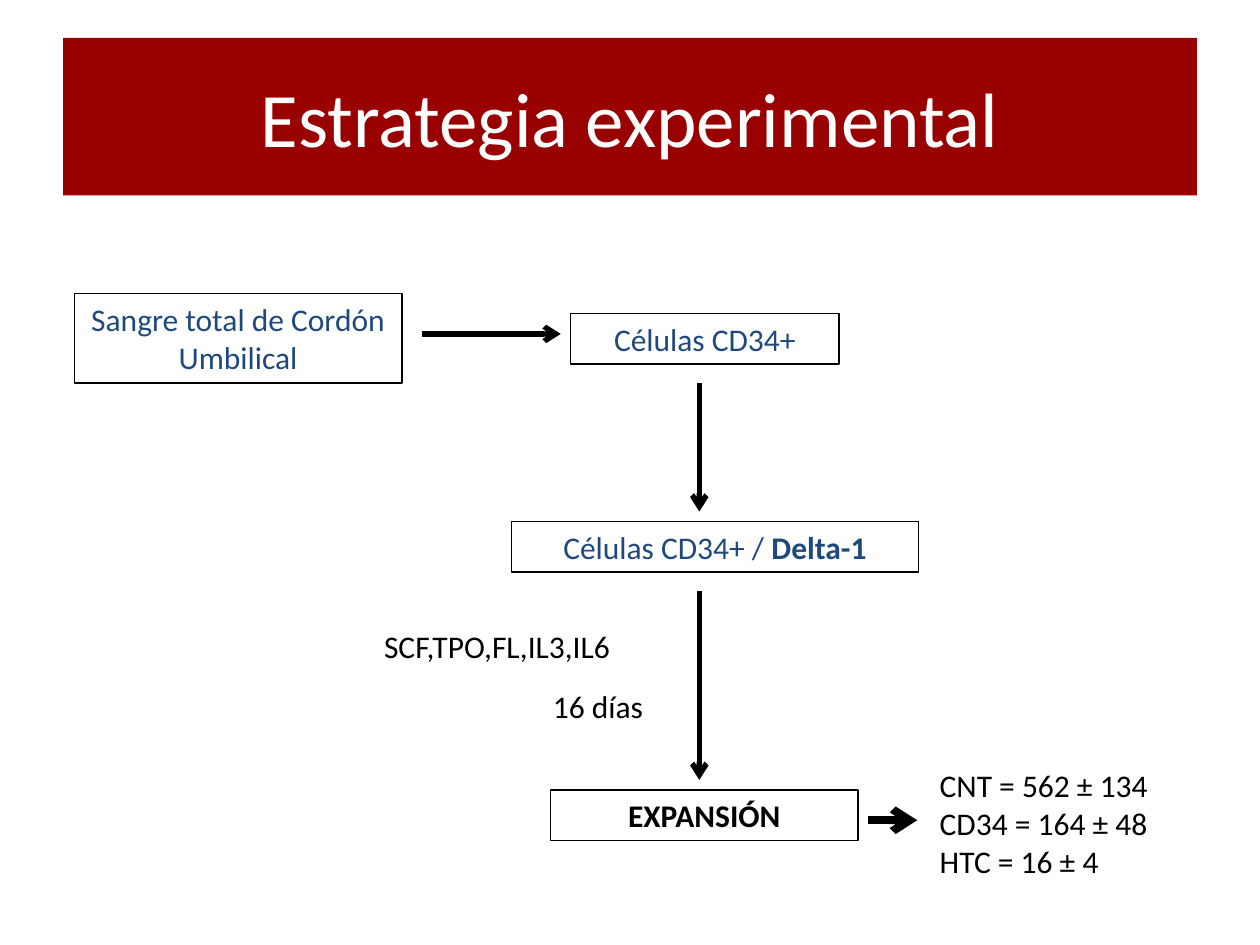
import pptx
import pptx.util
import pptx.dml.color
import pptx.enum.shapes
import pptx.enum.text
import lxml.etree
from pptx.util import Inches

BLUE, BLACK, WHITE, RED = "1F497D", "000000", "FFFFFF", "990000"
FONT = "Calibri"

# Content: (left, top, width, height), paragraphs of (text, bold) runs, colour
TITLE = "Estrategia experimental"
STEPS = [
    ((0.59, 2.33, 2.6, 0.71), [[("Sangre total de Cordón Umbilical", False)]], BLUE),
    ((4.53, 2.49, 2.13, 0.4), [[("Células CD34+", False)]], BLUE),
    ((4.06, 4.14, 3.23, 0.4), [[("Células CD34+ / ", False), ("Delta-1", True)]], BLUE),
    ((4.37, 6.27, 2.44, 0.4), [[("EXPANSIÓN", True)]], BLACK),
]
NOTES = [
    ((7.36, 6.03, 2.2, 1.01), ["CNT = 562 ± 134", "CD34 = 164 ± 48", "HTC = 16 ± 4"]),
    ((4.29, 5.4, 1.1, 0.4), ["16 días"]),
    ((2.95, 4.93, 2.6, 0.4), ["SCF,TPO,FL,IL3,IL6"]),
]
# Arrows: from x, y, to x, y, line width
ARROWS = [
    (3.35, 2.65, 4.45, 2.65, 3),
    (5.55, 3.04, 5.55, 4.06, 3),
    (5.55, 4.69, 5.55, 6.19, 3),
    (6.89, 6.51, 7.28, 6.51, 4.5),
]


def rgb(value):
    return pptx.dml.color.RGBColor.from_string(value)


def set_font(font, size, color):
    font.name = FONT
    font.size = pptx.util.Pt(size)
    font.color.rgb = rgb(color)


def write(tf, paragraphs, color, align):
    tf.word_wrap = True
    tf.vertical_anchor = pptx.enum.text.MSO_ANCHOR.TOP
    for i, runs in enumerate(paragraphs):
        p = tf.paragraphs[0] if i == 0 else tf.add_paragraph()
        p.alignment = align
        set_font(p.font, 18, color)
        for text, bold in runs:
            r = p.add_run()
            r.text = text
            if bold:
                r.font.bold = True


def add_arrow(s, x1, y1, x2, y2, width):
    line = s.shapes.add_connector(pptx.enum.shapes.MSO_CONNECTOR.STRAIGHT,
                                  *map(Inches, (x1, y1, x2, y2)))
    line.line.color.rgb = rgb(BLACK)
    line.line.width = pptx.util.Pt(width)
    ns = pptx.oxml.ns.qn
    lxml.etree.SubElement(line.line._get_or_add_ln(), ns("a:tailEnd"), type="arrow")
    lxml.etree.SubElement(line._element.spPr, ns("a:effectLst"))


prs = pptx.Presentation()
prs.slide_width, prs.slide_height = Inches(10), Inches(7.5)
s = prs.slides.add_slide(prs.slide_layouts[5])
align = pptx.enum.text.PP_ALIGN

# Title band
title = s.shapes.title
title.left, title.top, title.width, title.height = map(Inches, (0.5, 0.3, 9, 1.25))
title.fill.solid()
title.fill.fore_color.rgb = rgb(RED)
title.text_frame.text = TITLE
title.text_frame.vertical_anchor = pptx.enum.text.MSO_ANCHOR.MIDDLE
p = title.text_frame.paragraphs[0]
p.alignment = align.CENTER
set_font(p.font, 44, WHITE)

# Boxed steps
for box, paragraphs, color in STEPS:
    sp = s.shapes.add_shape(pptx.enum.shapes.MSO_SHAPE.RECTANGLE, *map(Inches, box))
    sp.shadow.inherit = False
    sp.fill.background()
    sp.line.color.rgb = rgb(BLACK)
    sp.line.width = pptx.util.Pt(0.75)
    write(sp.text_frame, paragraphs, color, align.CENTER)

# Conditions and results
for box, lines in NOTES:
    sp = s.shapes.add_textbox(*map(Inches, box))
    write(sp.text_frame, [[(text, False)] for text in lines], BLACK, align.LEFT)

# Arrows between steps
for arrow in ARROWS:
    add_arrow(s, *arrow)

prs.save("out.pptx")
